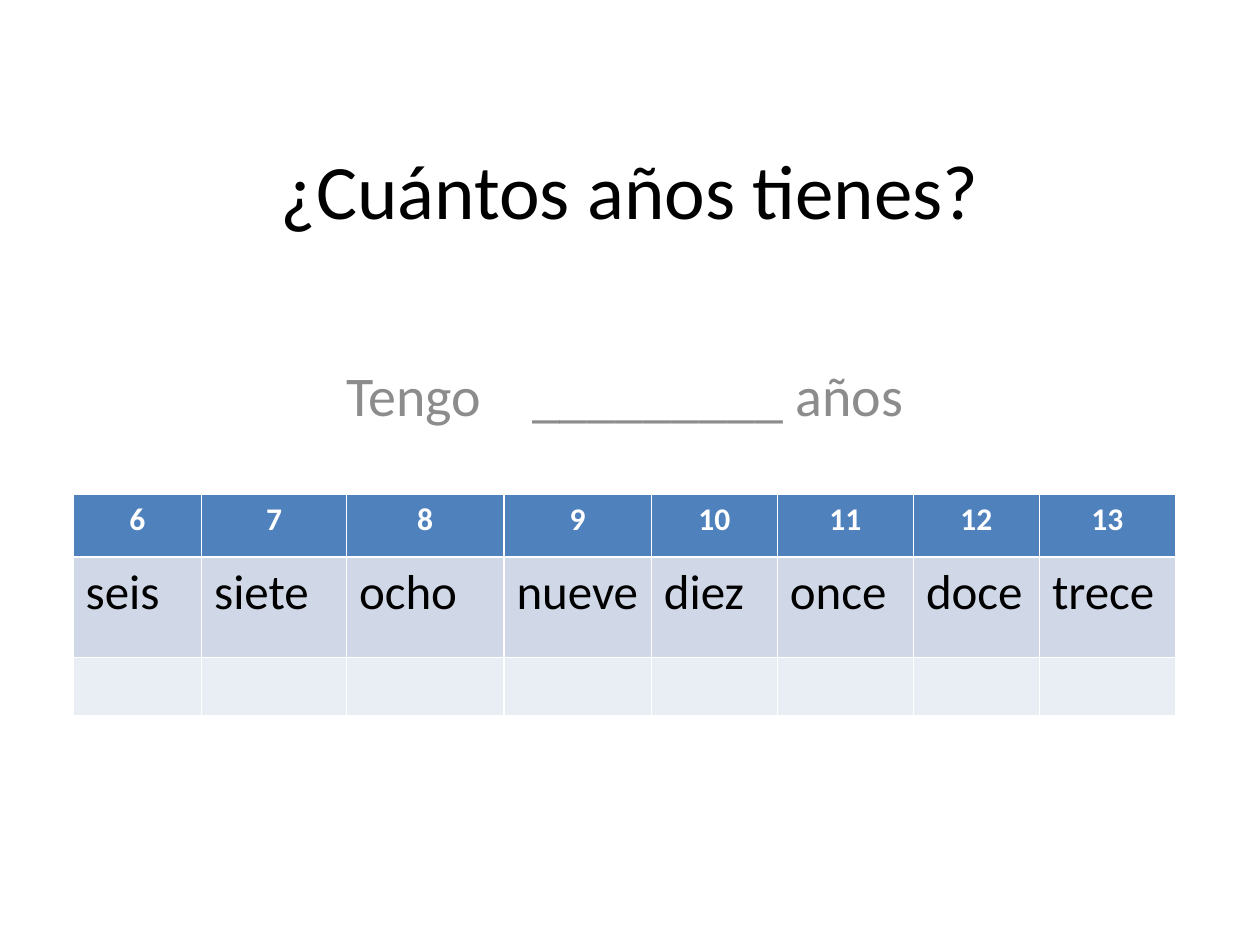
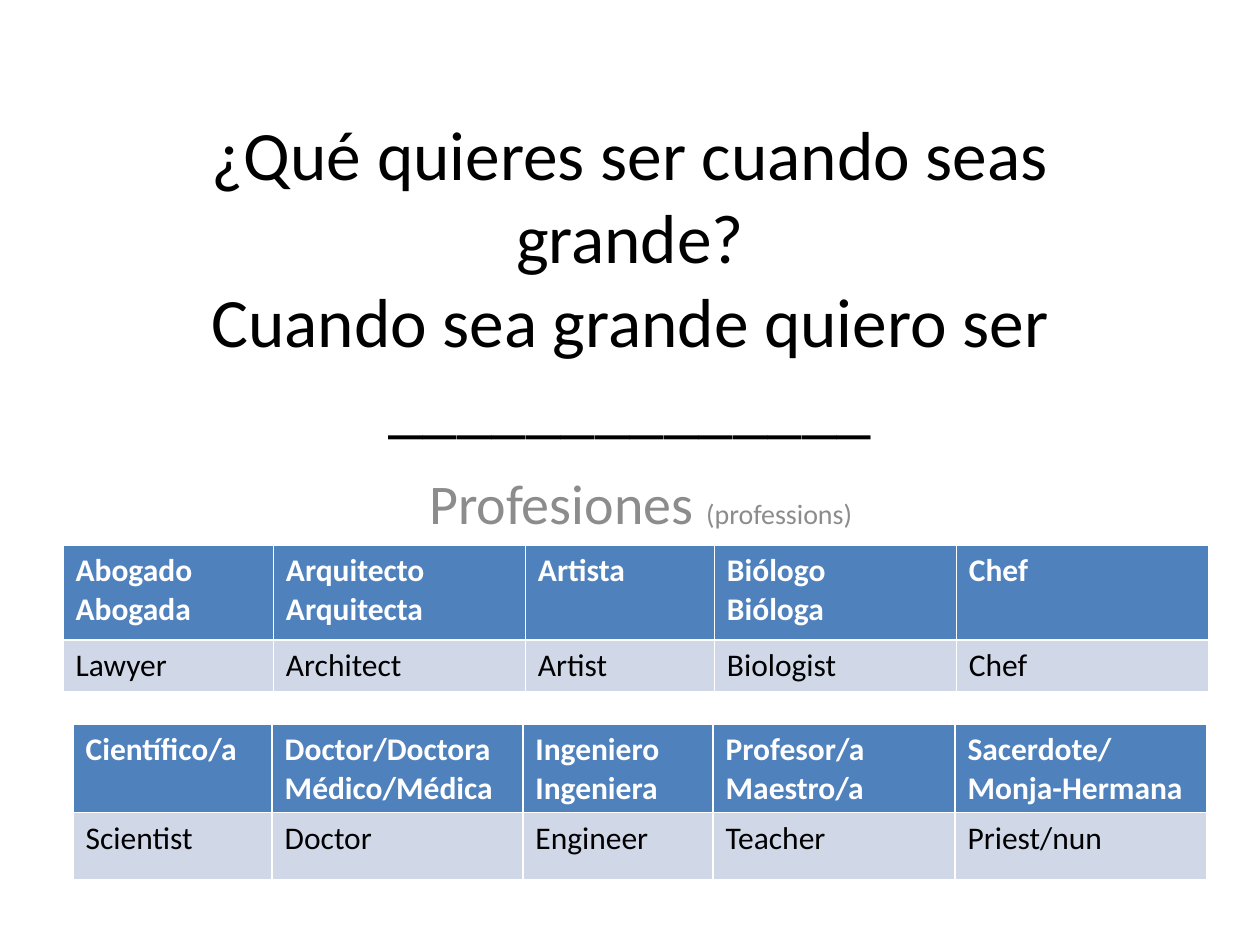
from pptx import Presentation
from pptx.dml.color import RGBColor
from pptx.enum.text import MSO_ANCHOR, MSO_AUTO_SIZE, PP_ALIGN
from pptx.util import Inches, Pt

CENTER = PP_ALIGN.CENTER
LEFT = PP_ALIGN.LEFT
MIDDLE = MSO_ANCHOR.MIDDLE
NO_FIT = MSO_AUTO_SIZE.NONE
BLACK = RGBColor(0x00, 0x00, 0x00)
WHITE = RGBColor(0xFF, 0xFF, 0xFF)
GRAY = RGBColor(0x8C, 0x8C, 0x8C)
BLUE = RGBColor(0x4F, 0x81, 0xBD)
BAND_DARK = RGBColor(0xD0, 0xD8, 0xE8)
BAND_LIGHT = RGBColor(0xE9, 0xED, 0xF4)
ROW_FILLS = [BLUE, BAND_DARK, BAND_LIGHT]
FONT = "Calibri"
TITLE_ONLY = 5


def style_text(frame, size, color, align, bold=False):
    for para in frame.paragraphs:
        para.alignment = align
        for span in para.runs:
            span.font.name = FONT
            span.font.size = Pt(size)
            span.font.bold = bold
            span.font.color.rgb = color


def add_word_table(page, left, top, widths, heights, rows, header_align, body_size):
    frame = page.shapes.add_table(
        len(rows), len(widths), Inches(left), Inches(top),
        Inches(sum(widths)), Inches(sum(heights)))
    table = frame.table
    for column, width in zip(table.columns, widths):
        column.width = Inches(width)
    for r, (words, height) in enumerate(zip(rows, heights)):
        table.rows[r].height = Inches(height)
        for c, word in enumerate(words):
            cell = table.cell(r, c)
            cell.fill.solid()
            cell.fill.fore_color.rgb = ROW_FILLS[r]
            cell.text_frame.text = word
            if r == 0:
                style_text(cell.text_frame, 18, WHITE, header_align, True)
            else:
                style_text(cell.text_frame, body_size, BLACK, LEFT)


deck = Presentation()
deck.slide_width = Inches(10)
deck.slide_height = Inches(7.5)

slides = [
    {
        "title": "¿Cuántos años tienes?",
        "title_height": 2.08, "title_size": 44, "title_bottom": 0.8,
        "subtitle": ["Tengo", " ", "_________ años"], "sizes": [32, 32, 32],
        "subtitle_at": (0.5, 2.17, 8.92, 4.25), "subtitle_top": 0.69,
        "tables": [
            (0.58, 3.92, [1.02, 1.15, 1.25, 1.17, 1, 1.08, 1, 1.08], [0.5, 0.8, 0.46],
             [[str(number) for number in range(6, 14)],
              ["seis", "siete", "ocho", "nueve", "diez", "once", "doce", "trece"],
              [""] * 8],
             CENTER, 28),
        ],
    },
    {
        "title": "¿Qué quieres ser cuando seas grande?\vCuando sea grande quiero ser ______________",
        "title_height": 2.75, "title_size": 39.6, "title_bottom": 0.05,
        "subtitle": ["Profesiones ", "(professions)"], "sizes": [32, 16],
        "subtitle_at": (0.42, 3.67, 9.33, 3.5), "subtitle_top": 0.05,
        "tables": [
            (0.5, 4.33, [1.67, 2, 1.5, 1.92, 2], [0.75, 0.41],
             [["Abogado\nAbogada", "Arquitecto\nArquitecta", "Artista", "Biólogo\nBióloga", "Chef"],
              ["Lawyer", "Architect", "Artist", "Biologist", "Chef"]],
             LEFT, 18),
            (0.58, 5.75, [1.58, 1.99, 1.51, 1.92, 2], [0.7, 0.53],
             [["Científico/a", "Doctor/Doctora\nMédico/Médica", "Ingeniero\nIngeniera",
               "Profesor/a\nMaestro/a", "Sacerdote/\nMonja-Hermana"],
              ["Scientist", "Doctor", "Engineer", "Teacher", "Priest/nun"]],
             LEFT, 18),
        ],
    },
]

for content in slides:
    page = deck.slides.add_slide(deck.slide_layouts[TITLE_ONLY])

    title = page.shapes.title
    title.left, title.top = Inches(0.75), Inches(0.83)
    title.width, title.height = Inches(8.5), Inches(content["title_height"])
    title.text_frame.text = content["title"]
    title.text_frame.auto_size = NO_FIT
    title.text_frame.vertical_anchor = MIDDLE
    title.text_frame.margin_bottom = Inches(content["title_bottom"])
    style_text(title.text_frame, content["title_size"], BLACK, CENTER)

    box = page.shapes.add_textbox(*[Inches(length) for length in content["subtitle_at"]])
    box.text_frame.word_wrap = True
    box.text_frame.margin_top = Inches(content["subtitle_top"])
    para = box.text_frame.paragraphs[0]
    for words in content["subtitle"]:
        para.add_run().text = words
    style_text(box.text_frame, 32, GRAY, CENTER)
    for span, size in zip(para.runs, content["sizes"]):
        span.font.size = Pt(size)
        if span.text == " ":
            span._r.get_or_add_rPr().set("spc", "2170")

    for table in content["tables"]:
        add_word_table(page, *table)

deck.save("out.pptx")
